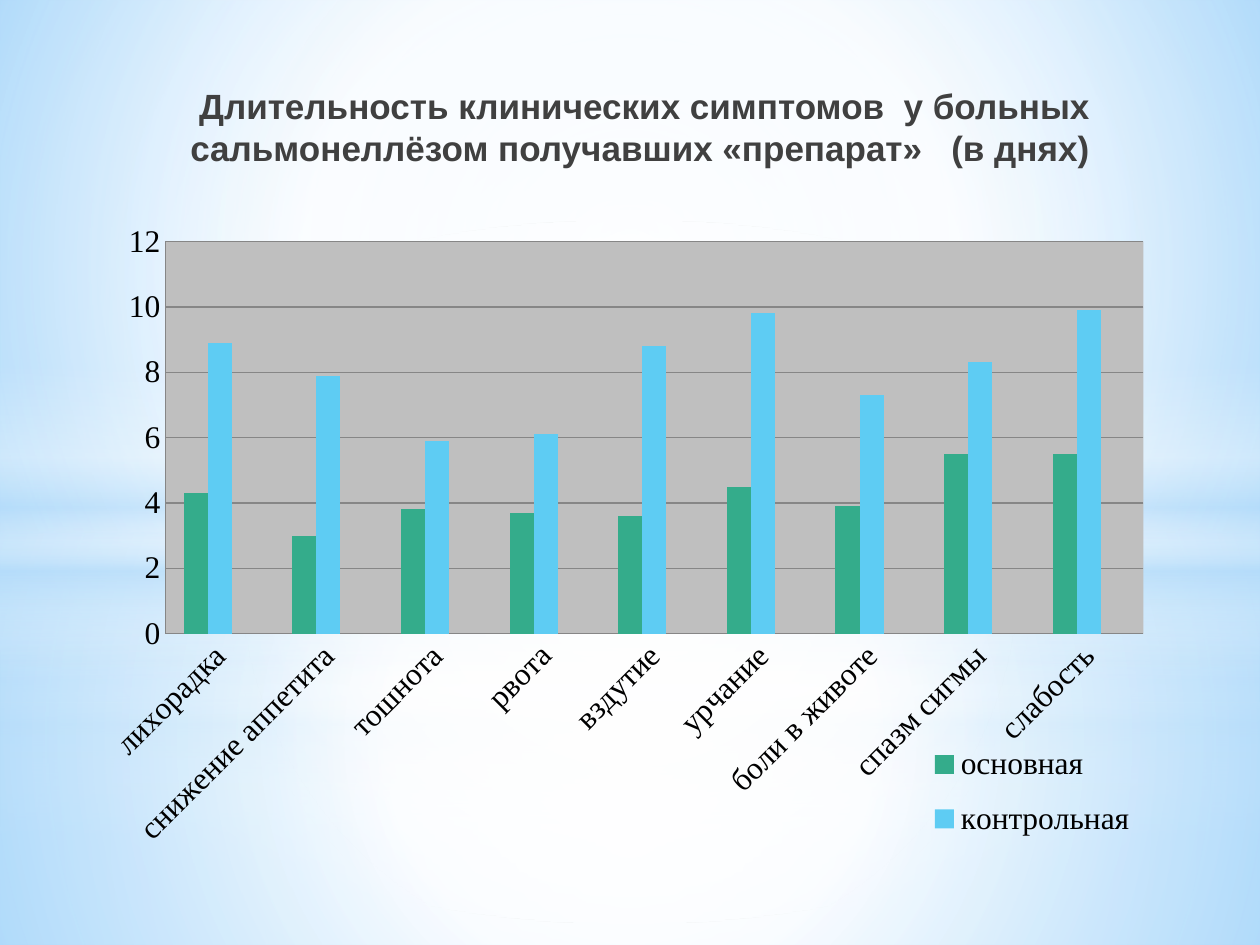
from lxml.etree import SubElement
from pptx import Presentation
from pptx.chart.data import CategoryChartData
from pptx.dml.color import RGBColor
from pptx.enum.chart import XL_CHART_TYPE, XL_LEGEND_POSITION, XL_TICK_MARK
from pptx.enum.shapes import MSO_SHAPE
from pptx.enum.text import MSO_ANCHOR, PP_ALIGN
from pptx.oxml import parse_xml
from pptx.oxml.ns import nsdecls, qn
from pptx.util import Cm, Pt

TITLE = "Длительность клинических симптомов  у больных сальмонеллёзом получавших «препарат»   (в днях)"
TITLE_AREA = (2.11, 0.33, 20.12, 3.2)
CHART_AREA = (2.11, 4.52, 21.13, 13)
SYMPTOMS = ["лихорадка", "снижение аппетита", "тошнота", "рвота", "вздутие",
            "урчание", "боли в животе", "спазм сигмы", "слабость"]
SERIES = [
    ("основная ", [4.3, 3, 3.8, 3.7, 3.6, 4.5, 3.9, 5.5, 5.5], "34AC8B"),
    ("контрольная", [8.9, 7.9, 5.9, 6.1, 8.8, 9.8, 7.3, 8.3, 9.9], "5ECCF3"),
    ("Series 3", [None] * len(SYMPTOMS), "A7EA52"),
]
TITLE_FONT = {"name": "Arial", "size": Pt(20), "bold": True}
CHART_FONT = {"name": "Times New Roman", "size": Pt(18), "bold": False}
PLOT_LAYOUT = {"x": 0.058, "y": 0.027, "w": 0.933, "h": 0.608}
LEGEND_LAYOUT = {"x": 0.78, "y": 0.78, "w": 0.21, "h": 0.2}

BACKDROP = [(0, "9ED5FF", 100), (60, "FFFFFF", 100), (100, "5BB9FF", 100)]
CENTRE = (50, 50, 50, 50)
BAND = [(0, "FFFFFF", 0), (29, "FFFFFF", 30), (45, "B4DCFA", 40),
        (55, "FFFFFF", 26), (65, "B4DCFA", 60), (100, "FFFFFF", 0)]
WIDTH, HEIGHT = 25.4, 19.05
GLOWS = [
    {"horizon": 14.17, "band": 10.46, "floor": (91, 76, 79), "sky": (89, 62, 79), "fade": 56},
    {"horizon": 10.74, "band": 7.37, "floor": (92, 77, 80), "sky": (90, 63, 80), "fade": 54},
]


def colour(value):
    return RGBColor.from_string(value)


def apply(target, values):
    for name, value in values.items():
        setattr(target, name, value)


def place(area):
    return [Cm(value) for value in area]


def set_gradient(solid, stops, focus=None):
    gradient = parse_xml(f'<a:gradFill {nsdecls("a")} rotWithShape="1"><a:gsLst/></a:gradFill>')
    for position, value, opacity in stops:
        stop = SubElement(gradient[0], qn("a:gs"), pos=str(position * 1000))
        shade = SubElement(stop, qn("a:srgbClr"), val=value)
        SubElement(shade, qn("a:alpha"), val=str(opacity * 1000))
    if focus:
        route = SubElement(gradient, qn("a:path"), path="circle")
        sides = {side: str(value * 1000) for side, value in zip("ltrb", focus)}
        SubElement(route, qn("a:fillToRect"), **sides)
    else:
        SubElement(gradient, qn("a:lin"), ang="5400000", scaled="0")
    solid.getparent().replace(solid, gradient)


def add_layer(page, kind, top, height, stops, focus=None):
    layer = page.shapes.add_shape(kind, *place((0, top, WIDTH, height)))
    layer.shadow.inherit = False
    layer.line.fill.background()
    layer.fill.solid()
    set_gradient(layer._element.spPr.find(qn("a:solidFill")), stops, focus)


def add_background(page):
    page.background.fill.solid()
    set_gradient(page._element.xpath("./p:cSld/p:bg//a:solidFill")[0], BACKDROP, (20, 10, 20, 60))
    tints = ("FFFFFF", "FFFFFF", "B4DCFA")
    for glow in GLOWS:
        horizon = glow["horizon"]
        floor = list(zip((0, 37, 100), tints, glow["floor"]))
        sky = list(zip((0, 48, 100), tints, glow["sky"]))
        halo = [(0, "FFFFFF", 100), (glow["fade"], "FFFFFF", 0)]
        add_layer(page, MSO_SHAPE.RECTANGLE, horizon, HEIGHT - horizon, floor, CENTRE)
        add_layer(page, MSO_SHAPE.RECTANGLE, 0, horizon, sky, CENTRE)
        add_layer(page, MSO_SHAPE.RECTANGLE, glow["band"], 6.35, BAND)
        add_layer(page, MSO_SHAPE.OVAL, 4.45, 14.17, halo, CENTRE)


def add_title(page):
    title = page.shapes.title
    apply(title, dict(zip(("left", "top", "width", "height"), place(TITLE_AREA))))
    apply(title.text_frame, {"text": TITLE, "word_wrap": True, "vertical_anchor": MSO_ANCHOR.BOTTOM})
    para = title.text_frame.paragraphs[0]
    para.alignment = PP_ALIGN.RIGHT
    span = para.runs[0]
    apply(span.font, TITLE_FONT)
    span.font.color.rgb = colour("404040")
    page.shapes._spTree.append(title._element)


def set_layout(parent, index, layout, inner=False):
    for old in parent.findall(qn("c:layout")):
        parent.remove(old)
    element = parse_xml(f'<c:layout {nsdecls("c")}><c:manualLayout/></c:layout>')
    values = {"layoutTarget": "inner"} if inner else {}
    values |= {"xMode": "edge", "yMode": "edge"} | layout
    for name, value in values.items():
        SubElement(element[0], qn(f"c:{name}"), val=str(value))
    parent.insert(index, element)


def add_chart(page):
    data = CategoryChartData(number_format="General")
    data.categories = SYMPTOMS
    for name, values, _ in SERIES:
        data.add_series(name, values)
    chart = page.shapes.add_chart(XL_CHART_TYPE.COLUMN_CLUSTERED, *place(CHART_AREA), data).chart
    apply(chart, {"has_title": False, "has_legend": True})
    apply(chart.font, CHART_FONT)
    chart.font.color.rgb = colour("000000")

    plot = chart.plots[0]
    apply(plot, {"gap_width": 150, "overlap": 0, "vary_by_categories": False})
    for series, (_, _, value) in zip(plot.series, SERIES):
        series.format.fill.solid()
        series.format.fill.fore_color.rgb = colour(value)

    days, symptoms = chart.value_axis, chart.category_axis
    apply(days, {"minimum_scale": 0, "maximum_scale": 12, "major_unit": 2, "has_major_gridlines": True})
    for axis in (days, symptoms):
        apply(axis, {"major_tick_mark": XL_TICK_MARK.NONE, "minor_tick_mark": XL_TICK_MARK.NONE})
        apply(axis.tick_labels.font, CHART_FONT)
    for part in (days, symptoms, days.major_gridlines):
        part.format.line.width = Pt(0.75)
        part.format.line.color.rgb = colour("868686")
    symptoms._element.find(qn("c:txPr")).find(qn("a:bodyPr")).set("rot", "-2700000")

    area = chart._chartSpace.chart.plotArea
    set_layout(area, 0, PLOT_LAYOUT, inner=True)
    area.append(parse_xml(f'<c:spPr {nsdecls("c", "a")}><a:solidFill><a:srgbClr val="BFBFBF"/>'
                          '</a:solidFill></c:spPr>'))

    legend = chart.legend
    apply(legend, {"position": XL_LEGEND_POSITION.RIGHT, "include_in_layout": False})
    apply(legend.font, CHART_FONT)
    set_layout(legend._element, 1, LEGEND_LAYOUT)
    legend._element.insert(1, parse_xml(f'<c:legendEntry {nsdecls("c")}><c:idx val="2"/>'
                                        '<c:delete val="1"/></c:legendEntry>'))


def main():
    deck = Presentation()
    apply(deck, {"slide_width": Cm(WIDTH), "slide_height": Cm(HEIGHT)})
    page = deck.slides.add_slide(deck.slide_layouts[5])
    add_background(page)
    add_title(page)
    add_chart(page)
    deck.save("out.pptx")


if __name__ == "__main__":
    main()
